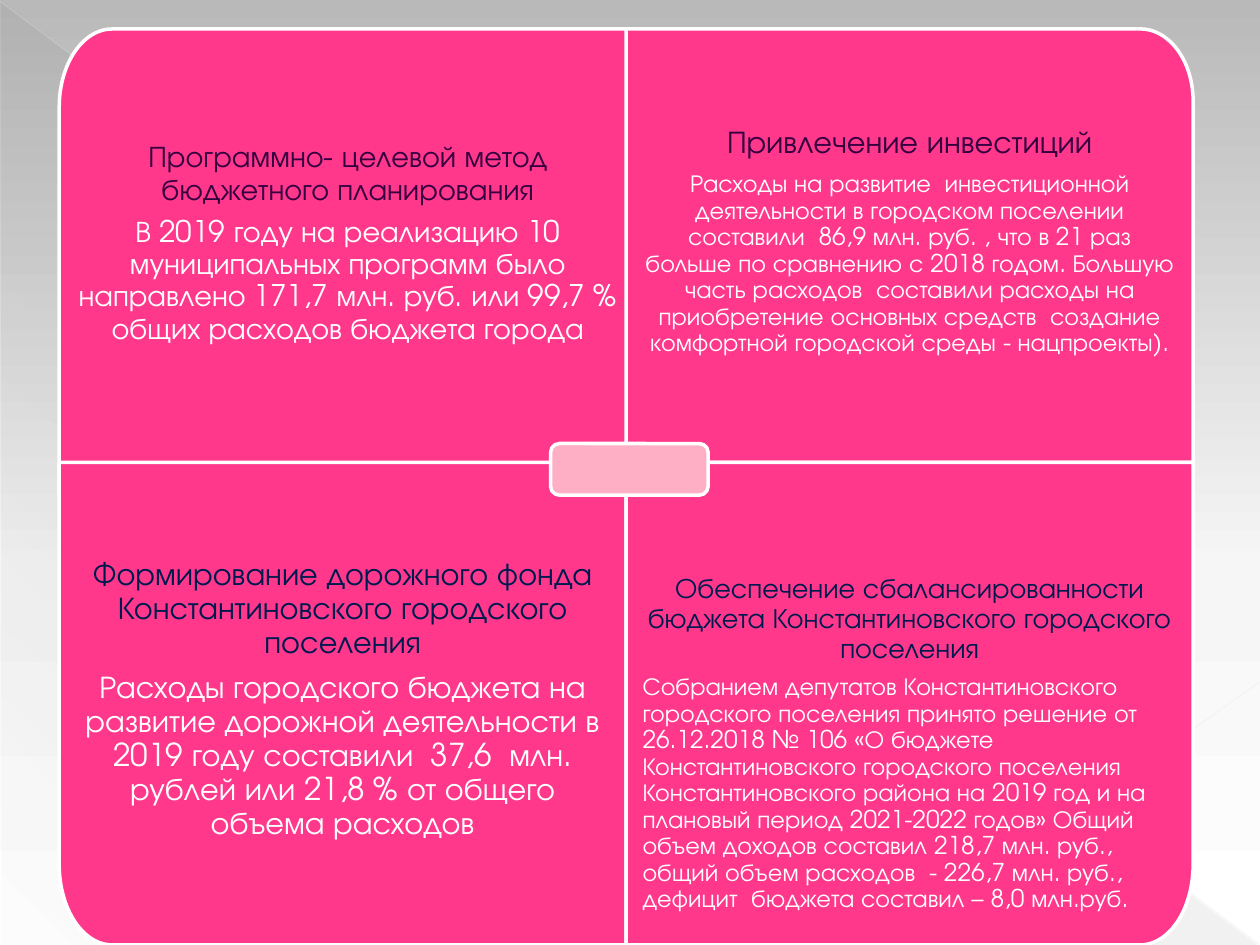
"""Build a slide with four budget policy tiles around a central badge."""
import math

import lxml.etree
import pptx
import pptx.dml.color
import pptx.enum.shapes
import pptx.enum.text
import pptx.oxml.ns
import pptx.util

Inches = pptx.util.Inches
Pt = pptx.util.Pt
qn = pptx.oxml.ns.qn
RGBColor = pptx.dml.color.RGBColor
SHAPE = pptx.enum.shapes.MSO_SHAPE
ALIGN = pptx.enum.text.PP_ALIGN
ANCHOR = pptx.enum.text.MSO_ANCHOR

THEME = {
    "font": "TeX Gyre Adventor",
    "tile": "FF388C", "badge": "FFAFC5", "outline": "FFFFFF", "body": "FFFFFF",
    "plum": "340040", "navy": "001A4F",
    "outline_width": 2, "line_spacing": 0.9, "space_share": 0.35,
    "background": [(0, "B9B9B9", 100), (60, "F6F6F6", 100), (100, "FFFFFF", 100)],
    "shade": [(0, "666666", 10), (70, "666666", 8), (100, "666666", 1)],
}

TILES = [
    {"box": (0.47, 0.23, 4.58, 3.71), "corner": (-1, -1), "anchor": ANCHOR.MIDDLE,
     "margins": (0.46, 0.76), "color": "plum", "sizes": (17, 17), "body_align": ALIGN.CENTER,
     "title": "Программно- целевой метод бюджетного планирования",
     "body": "В 2019 году на реализацию 10 муниципальных программ было направлено "
             "171,7 млн. руб. или 99,7 % общих расходов бюджета города"},
    {"box": (4.97, 0.23, 4.5, 3.44), "corner": (1, -1), "anchor": ANCHOR.MIDDLE,
     "margins": (0.7, 0.76), "color": "plum", "sizes": (18, 14), "body_align": ALIGN.CENTER,
     "title": "Привлечение инвестиций",
     "body": "Расходы на развитие  инвестиционной деятельности в городском поселении "
             "составили  86,9 млн. руб. , что в 21 раз больше по сравнению с 2018 годом. "
             "Большую часть расходов  составили расходы на приобретение основных средств  "
             "создание комфортной городской среды - нацпроекты)."},
    {"box": (0.47, 3.67, 4.5, 3.83), "corner": (-1, 1), "anchor": ANCHOR.TOP,
     "margins": (0.76, 0.13), "color": "navy", "sizes": (18, 18), "body_align": ALIGN.CENTER,
     "title": "Формирование дорожного фонда Константиновского городского поселения",
     "body": "Расходы городского бюджета на развитие дорожной деятельности в 2019 году "
             "составили  37,6  млн. рублей или 21,8 % от общего объема расходов"},
    {"box": (4.97, 3.67, 4.5, 3.83), "corner": (1, 1), "anchor": ANCHOR.MIDDLE,
     "margins": (0.76, 0.13), "color": "navy", "sizes": (16, 14), "body_align": ALIGN.LEFT,
     "title": "Обеспечение сбалансированности бюджета Константиновского городского поселения",
     "body": "Собранием депутатов Константиновского городского поселения принято решение "
             "от 26.12.2018 № 106 «О бюджете Константиновского городского поселения "
             "Константиновского района на 2019 год и на плановый период 2021-2022 годов» "
             "Общий объем доходов составил 218,7 млн. руб., общий объем расходов  - "
             "226,7 млн. руб., дефицит  бюджета составил – 8,0 млн.руб."},
]

BADGE = (4.37, 3.52, 1.25, 0.41)
SHADE = (0.01, 0.02, 9.98, 7.48)
RAYS = [
    ((0, 0.01, 9.99, 7.49), "E8E8E8", 0.39, 35),
    ((10, 5.41, 7.07, 7.49), "EAEAEA", 0.47, 45),
]
CORNER_WIDTH = 0.42
CORNER_SHARE = 1 / 6
ARC_STEPS = 24


def set_values(target, values):
    for name, value in values.items():
        setattr(target, name, value)


def add_alpha(color_element, percent):
    alpha = lxml.etree.SubElement(color_element, qn("a:alpha"))
    alpha.set("val", str(percent * 1000))


def set_gradient(fill, element, stops, angle):
    fill.gradient()
    fill.gradient_angle = 360 - angle
    stop_list = next(element.iter(qn("a:gsLst")))
    for stop in list(stop_list):
        stop_list.remove(stop)
    for position, color, opacity in stops:
        stop = lxml.etree.SubElement(stop_list, qn("a:gs"), pos=str(position * 1000))
        color_element = lxml.etree.SubElement(stop, qn("a:srgbClr"), val=color)
        if opacity < 100:
            add_alpha(color_element, opacity)


def paint(shape, color):
    shape.shadow.inherit = False
    shape.fill.solid()
    shape.fill.fore_color.rgb = RGBColor.from_string(color)
    shape.line.color.rgb = RGBColor.from_string(THEME["outline"])
    shape.line.width = Pt(THEME["outline_width"])


def tile_outline(box, corner):
    left, top, width, height = box
    side_x, side_y = corner
    outer_x, inner_x = (left + width, left) if side_x > 0 else (left, left + width)
    outer_y, inner_y = (top + height, top) if side_y > 0 else (top, top + height)
    radius_x, radius_y = side_x * CORNER_WIDTH, side_y * height * CORNER_SHARE
    angles = [math.pi / 2 * step / ARC_STEPS for step in range(ARC_STEPS + 1)]
    arc = [(outer_x - radius_x * (1 - math.sin(angle)),
            outer_y - radius_y * (1 - math.cos(angle))) for angle in angles]
    return [(inner_x, inner_y), (inner_x, outer_y), *arc, (outer_x, inner_y)]


def write_paragraph(paragraph, text, size, color, alignment):
    set_values(paragraph, {
        "alignment": alignment, "line_spacing": THEME["line_spacing"],
        "space_before": Pt(0), "space_after": Pt(size * THEME["space_share"])})
    run = paragraph.add_run()
    run.text = text
    set_values(run.font, {"size": Pt(size), "name": THEME["font"]})
    run.font.color.rgb = RGBColor.from_string(THEME[color])


def add_tile(slide, tile):
    points = [(Inches(x), Inches(y)) for x, y in tile_outline(tile["box"], tile["corner"])]
    builder = slide.shapes.build_freeform(*points[0])
    builder.add_line_segments(points[1:], close=True)
    shape = builder.convert_to_shape()
    paint(shape, THEME["tile"])
    frame = shape.text_frame
    margin_top, margin_bottom = tile["margins"]
    set_values(frame, {
        "word_wrap": True, "vertical_anchor": tile["anchor"],
        "margin_left": Inches(0.13), "margin_right": Inches(0.13),
        "margin_top": Inches(margin_top), "margin_bottom": Inches(margin_bottom)})
    title_size, body_size = tile["sizes"]
    write_paragraph(frame.paragraphs[0], tile["title"], title_size, tile["color"], ALIGN.CENTER)
    write_paragraph(frame.add_paragraph(), tile["body"], body_size, "body", tile["body_align"])


def add_backdrop(slide):
    set_gradient(slide.background.fill, slide.element, THEME["background"], 90)
    shade = slide.shapes.add_shape(SHAPE.RIGHT_TRIANGLE, *map(Inches, SHADE))
    shade.shadow.inherit = False
    shade.line.fill.background()
    set_gradient(shade.fill, shade.element, THEME["shade"], 133)
    for ends, color, width, opacity in RAYS:
        ray = slide.shapes.add_connector(
            pptx.enum.shapes.MSO_CONNECTOR.STRAIGHT, *map(Inches, ends))
        ray.line.color.rgb = RGBColor.from_string(color)
        ray.line.width = Pt(width)
        add_alpha(next(ray.element.iter(qn("a:srgbClr"))), opacity)
        lxml.etree.SubElement(ray.element.spPr, qn("a:effectLst"))


def main():
    presentation = pptx.Presentation()
    set_values(presentation, {"slide_width": Inches(10), "slide_height": Inches(7.5)})
    slide = presentation.slides.add_slide(presentation.slide_layouts[6])
    add_backdrop(slide)
    for tile in TILES:
        add_tile(slide, tile)
    badge = slide.shapes.add_shape(SHAPE.ROUNDED_RECTANGLE, *map(Inches, BADGE))
    badge.adjustments[0] = 0.17
    paint(badge, THEME["badge"])
    presentation.save("out.pptx")


if __name__ == "__main__":
    main()
